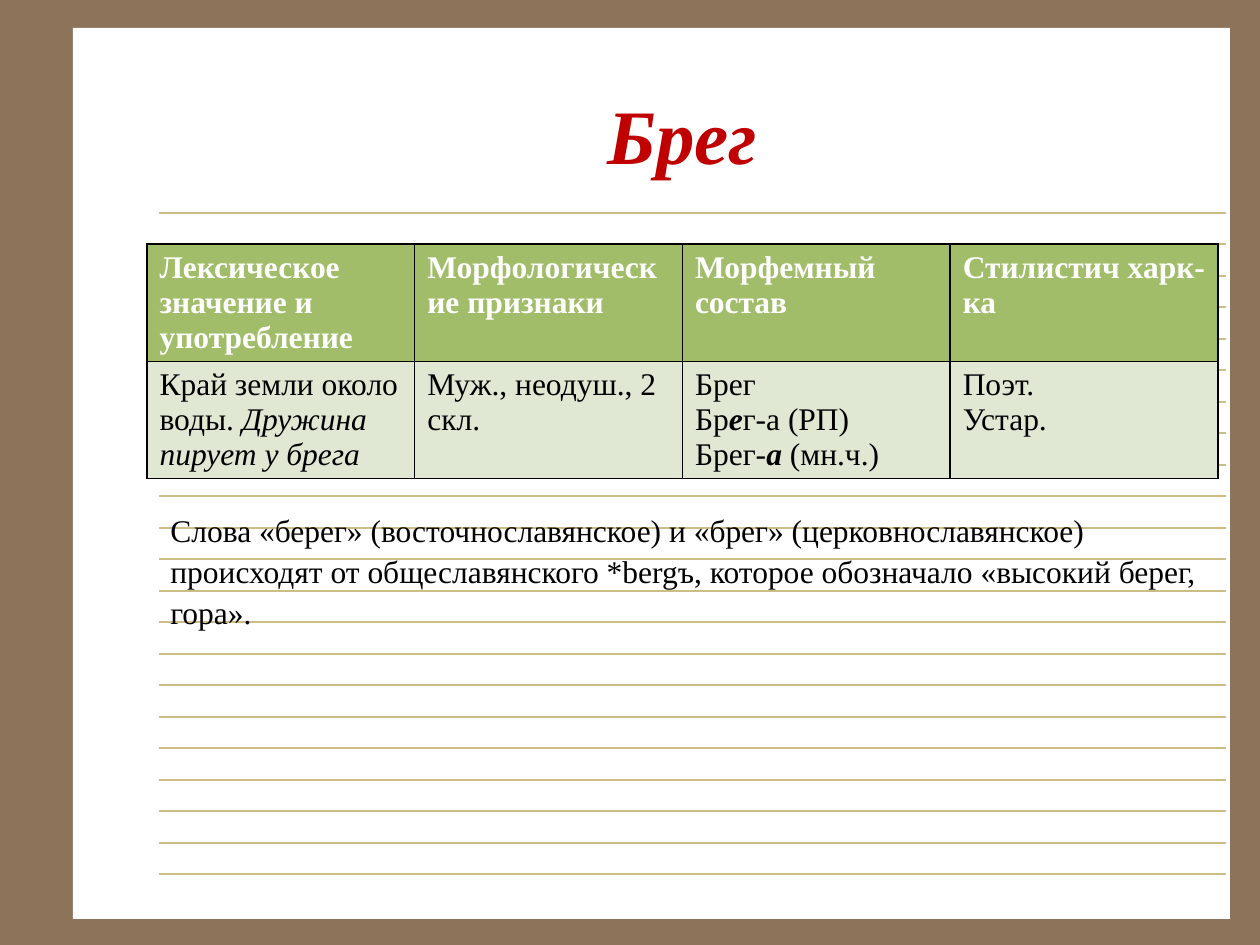
from lxml.etree import SubElement
from pptx import Presentation
from pptx.dml.color import RGBColor
from pptx.enum.shapes import MSO_CONNECTOR, MSO_SHAPE
from pptx.enum.text import MSO_ANCHOR, PP_ALIGN
from pptx.oxml.ns import qn
from pptx.util import Pt

SCALE = 914400 / 126


def px(*nums):
    return [round(n * SCALE) for n in nums]


def color(code):
    return RGBColor.from_string(code)


def write(frame, paras, size=18, ink="000000", font="Times New Roman",
          bold=False, align=PP_ALIGN.LEFT, space=None):
    """Each paragraph is a string or a list of (text, marks); marks: b, i."""
    frame.word_wrap = True
    for n, runs in enumerate(paras):
        para = frame.add_paragraph() if n else frame.paragraphs[0]
        para.alignment = align
        para.line_spacing = space
        if isinstance(runs, str):
            runs = [(runs, "")]
        for text, marks in runs:
            run = para.add_run()
            run.text = text
            style = run.font
            style.name, style.size = font, Pt(size)
            style.bold = bold or "b" in marks
            style.italic = "i" in marks
            style.color.rgb = color(ink)


class Page:
    back, paper, rule = "8C735A", "FFFFFF", "CBBD83"
    head, body, edge = "A1BD69", "E0E8D4", "000000"

    def __init__(self, deck):
        self.slide = deck.slides.add_slide(deck.slide_layouts[5])
        self.shapes = self.slide.shapes
        fill = self.slide.background.fill
        fill.solid()
        fill.fore_color.rgb = color(self.back)

    def sheet(self, *box):
        rect = self.shapes.add_shape(MSO_SHAPE.RECTANGLE, *px(*box))
        rect.shadow.inherit = False
        rect.fill.solid()
        rect.fill.fore_color.rgb = color(self.paper)
        rect.line.fill.background()

    def line(self, left, right, y):
        line = self.shapes.add_connector(
            MSO_CONNECTOR.STRAIGHT, *px(left, y, right, y))
        line.line.color.rgb = color(self.rule)
        line.line.width = Pt(0.75)
        SubElement(line._element.spPr, qn("a:effectLst"))

    def title(self, text, *box):
        title = self.shapes.title
        title.left, title.top, title.width, title.height = px(*box)
        title.text_frame.vertical_anchor = MSO_ANCHOR.MIDDLE
        write(title.text_frame, [[(text, "bi")]], size=44, ink="C00000",
              align=PP_ALIGN.CENTER)
        # Bring the title in front of the sheet
        title.element.getparent().append(title.element)

    def border(self, cell):
        props = cell._tc.get_or_add_tcPr()
        for n, side in enumerate(("lnL", "lnR", "lnT", "lnB")):
            line = props.makeelement(qn(f"a:{side}"), {"w": str(Pt(1))})
            fill = SubElement(line, qn("a:solidFill"))
            SubElement(fill, qn("a:srgbClr"), val=self.edge)
            props.insert(n, line)

    def table(self, rows, *box):
        grid = self.shapes.add_table(len(rows), len(rows[0]), *px(*box)).table
        for r, row in enumerate(rows):
            top = r == 0
            for c, paras in enumerate(row):
                cell = grid.cell(r, c)
                cell.fill.solid()
                cell.fill.fore_color.rgb = color(self.head if top else self.body)
                self.border(cell)
                write(cell.text_frame, paras, bold=top,
                      ink="FFFFFF" if top else "000000")

    def note(self, text, *box):
        frame = self.shapes.add_textbox(*px(*box)).text_frame
        write(frame, [text], space=1.09)


def main():
    deck = Presentation()
    deck.slide_width, deck.slide_height = px(1260, 945)
    page = Page(deck)

    # Ruled sheet of paper
    page.sheet(73, 28, 1157, 891)
    for n in range(22):
        page.line(159, 1226, 213 + n * 63 // 2)

    page.title("Брег", 147, 55, 1071, 158)

    # Features of the word
    page.table([
        [["Лексическое значение и употребление"],
         ["Морфологические признаки"],
         ["Морфемный состав"],
         ["Стилистич харк-ка"]],
        [[[("Край земли около воды. ", ""), ("Дружина пирует у брега", "i")]],
         ["Муж., неодуш., 2 скл."],
         ["Брег",
          [("Бр", ""), ("е", "bi"), ("г-а (РП)", "")],
          [("Брег-", ""), ("а", "bi"), (" (мн.ч.)", "")]],
         ["Поэт.", "Устар."]],
    ], 147, 244, 1071, 234)

    # Origin of the word
    page.note("Слова «берег» (восточнославянское) и «брег» "
              "(церковнославянское) происходят от общеславянского *bergъ, "
              "которое обозначало «высокий берег, гора».",
              158, 501, 1053, 127)

    deck.save("out.pptx")


if __name__ == "__main__":
    main()
